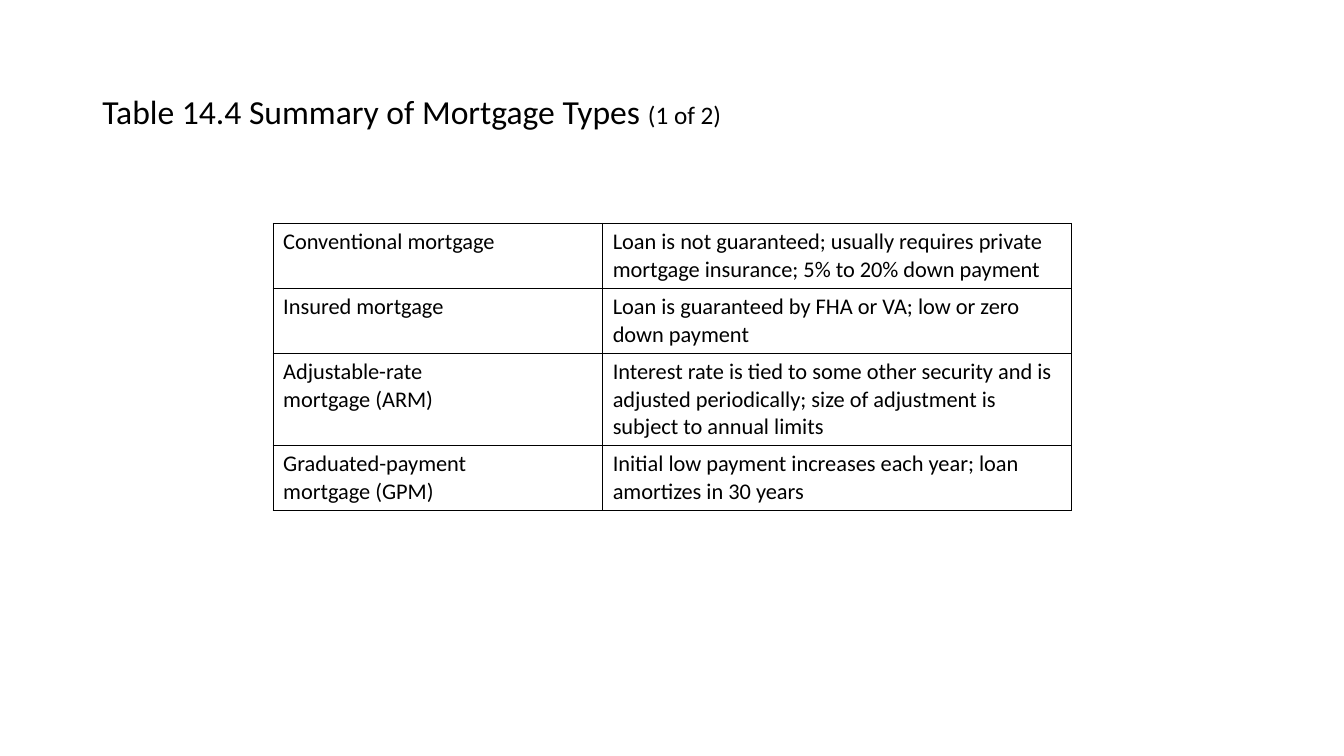
from dataclasses import dataclass

from lxml.etree import SubElement
from pptx import Presentation
from pptx.dml.color import RGBColor
from pptx.enum.text import MSO_ANCHOR, PP_ALIGN
from pptx.oxml.ns import qn
from pptx.slide import Slide
from pptx.table import _Cell as Cell
from pptx.text.text import _Paragraph as Paragraph
from pptx.util import Pt


@dataclass(frozen=True)
class Theme:
    font: str = "Calibri"
    ink: str = "000000"
    title_size: float = 24
    counter_size: float = 18
    body_size: float = 16
    border_width: float = 1


@dataclass(frozen=True)
class MortgageType:
    name: tuple[str, ...]
    summary: str
    height: float


THEME = Theme()
COLUMN_WIDTHS = (235.4, 334.8)
MORTGAGE_TYPES = (
    MortgageType(
        ("Conventional mortgage",),
        "Loan is not guaranteed; usually requires private mortgage insurance; "
        "5% to 20% down payment",
        46.4,
    ),
    MortgageType(
        ("Insured mortgage",),
        "Loan is guaranteed by FHA or VA; low or zero down payment",
        46.4,
    ),
    MortgageType(
        ("Adjustable-rate", "mortgage (ARM)"),
        "Interest rate is tied to some other security and is adjusted "
        "periodically; size of adjustment is subject to annual limits",
        65.8,
    ),
    MortgageType(
        ("Graduated-payment", "mortgage (GPM)"),
        "Initial low payment increases each year; loan amortizes in 30 years",
        46.4,
    ),
)


def add_span(para: Paragraph, text: str, size: float) -> None:
    span = para.add_run()
    span.text = text
    span.font.name = THEME.font
    span.font.size = Pt(size)
    span.font.bold = False
    span.font.color.rgb = RGBColor.from_string(THEME.ink)


def add_title(page: Slide) -> None:
    title = page.shapes.title
    title.left, title.top = Pt(66), Pt(28.75)
    title.width, title.height = Pt(828), Pt(104.4)
    frame = title.text_frame
    frame.word_wrap = True
    frame.vertical_anchor = MSO_ANCHOR.MIDDLE
    para = frame.paragraphs[0]
    para.alignment = PP_ALIGN.LEFT
    para.line_spacing = 0.9
    add_span(para, "Table 14.4 Summary of Mortgage Types ", THEME.title_size)
    add_span(para, "(1 of 2)", THEME.counter_size)


def add_borders(cell: Cell) -> None:
    properties = cell._tc.get_or_add_tcPr()
    for position, side in enumerate(("lnL", "lnR", "lnT", "lnB")):
        line = SubElement(properties, qn(f"a:{side}"), w=str(Pt(THEME.border_width)))
        fill = SubElement(line, qn("a:solidFill"))
        SubElement(fill, qn("a:srgbClr"), val=THEME.ink)
        properties.insert(position, line)


def fill_cell(cell: Cell, lines: tuple[str, ...]) -> None:
    cell.fill.background()
    add_borders(cell)
    frame = cell.text_frame
    for index, text in enumerate(lines):
        para = frame.add_paragraph() if index else frame.paragraphs[0]
        add_span(para, text, THEME.body_size)


def add_mortgage_table(page: Slide) -> None:
    height = sum(mortgage.height for mortgage in MORTGAGE_TYPES)
    table = page.shapes.add_table(
        len(MORTGAGE_TYPES), len(COLUMN_WIDTHS),
        Pt(195.1), Pt(159.6), Pt(sum(COLUMN_WIDTHS)), Pt(height),
    ).table
    table.first_row = False
    table.horz_banding = False
    for column, width in zip(table.columns, COLUMN_WIDTHS):
        column.width = Pt(width)
    for row, mortgage in zip(table.rows, MORTGAGE_TYPES):
        row.height = Pt(mortgage.height)
        for cell, lines in zip(row.cells, (mortgage.name, (mortgage.summary,))):
            fill_cell(cell, lines)


def main() -> None:
    deck = Presentation()
    deck.slide_width, deck.slide_height = Pt(960), Pt(540)
    page = deck.slides.add_slide(deck.slide_layouts.get_by_name("Title Only"))
    add_title(page)
    add_mortgage_table(page)
    deck.save("out.pptx")


if __name__ == "__main__":
    main()
